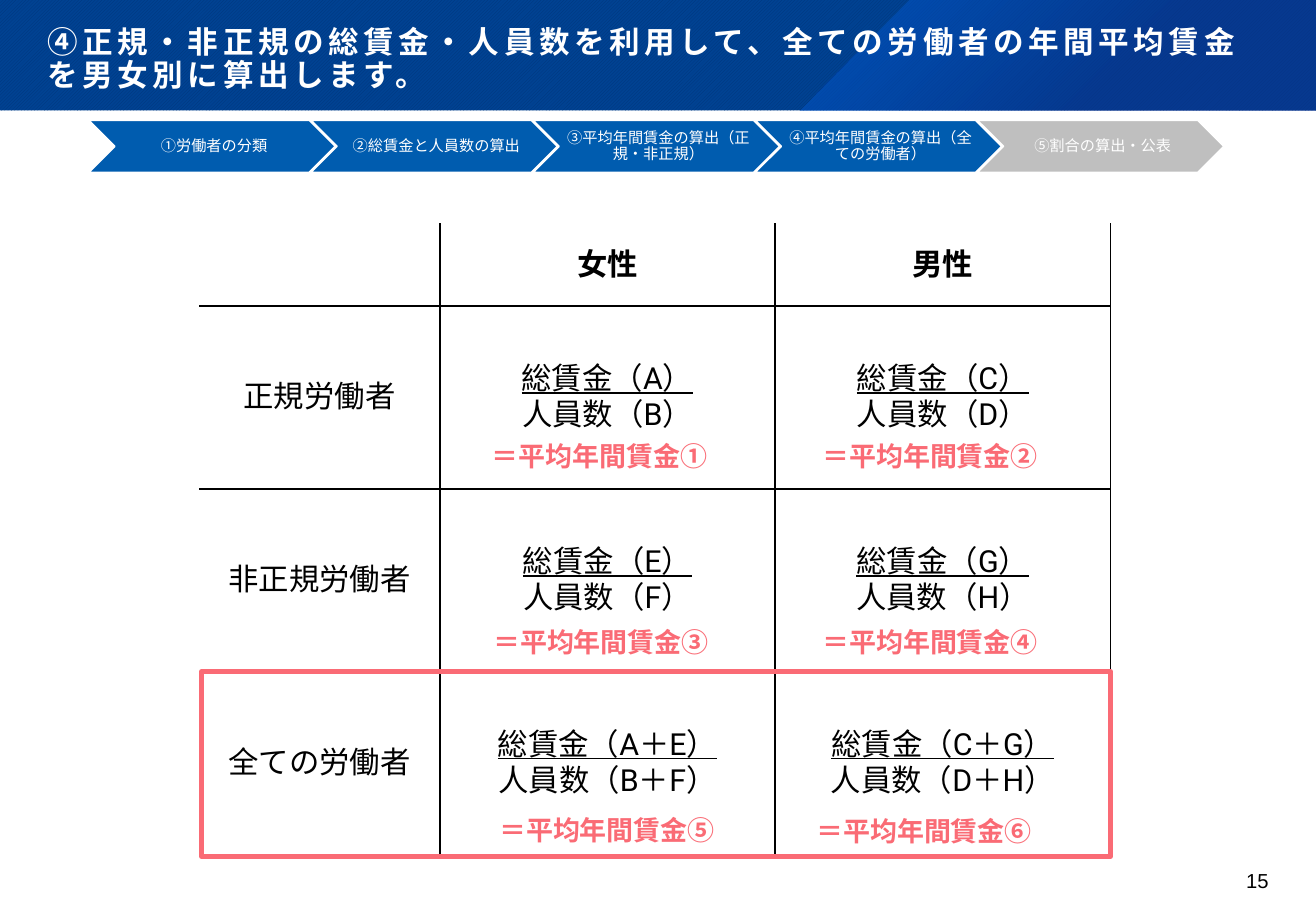
from dataclasses import dataclass

from pptx import Presentation
from pptx.dml.color import RGBColor
from pptx.enum.dml import MSO_PATTERN
from pptx.enum.shapes import MSO_SHAPE
from pptx.enum.text import MSO_ANCHOR, MSO_AUTO_SIZE, PP_ALIGN
from pptx.oxml import parse_xml
from pptx.oxml.ns import nsdecls, qn
from pptx.util import Inches, Pt

RECT, CHEVRON = MSO_SHAPE.RECTANGLE, MSO_SHAPE.CHEVRON
LEFT, CENTER, RIGHT = PP_ALIGN.LEFT, PP_ALIGN.CENTER, PP_ALIGN.RIGHT
TOP, MIDDLE, BOTTOM = MSO_ANCHOR.TOP, MSO_ANCHOR.MIDDLE, MSO_ANCHOR.BOTTOM
HATCH = MSO_PATTERN.DARK_UPWARD_DIAGONAL
WIDE, HIGH = Inches(10.83), Inches(7.5)
FONT = "Roboto"
COLORS = {
    "navy": "003579", "royal": "004292", "glow": "0064DF", "deep": "0C338E",
    "step": "005CAF", "grey": "BFBFBF", "pink": "FA6B75",
    "white": "FFFFFF", "black": "000000",
}


@dataclass
class Box:
    """Place and size in percent of the slide's width and height."""
    x: float
    y: float
    w: float
    h: float

    def emu(self) -> tuple[int, int, int, int]:
        return across(self.x), down(self.y), across(self.w), down(self.h)


@dataclass
class Style:
    size: float
    color: str
    bold: bool = False
    font: str = FONT
    align: PP_ALIGN = LEFT
    anchor: MSO_ANCHOR = TOP
    pad: tuple = (0.1, 0.05, 0.1, 0.05)
    lead: float = 1.0


@dataclass
class Step:
    text: str
    color: str = "step"


@dataclass
class Group:
    name: str
    women: tuple[str, str]
    men: tuple[str, str]


@dataclass
class Result:
    mark: str
    x: float
    y: float


TITLE = Style(18.1, "white", True, anchor=BOTTOM, pad=(0.39, 0.36, 0.36, 0.14), lead=0.9)
STEP = Style(9, "white", align=CENTER, anchor=MIDDLE, pad=(0.04, 0.01, 0.01, 0.01), lead=0.9)
PAGE = Style(12, "black", font="Arial", align=RIGHT, pad=(0, 0, 0, 0))
RESULT = Style(16, "pink", True)
HEAD = Style(18, "black", True, align=CENTER)
CELL = Style(18, "black", align=CENTER)

STEPS = [
    Step("①労働者の分類"),
    Step("②総賃金と人員数の算出"),
    Step("③平均年間賃金の算出（正規・非正規）"),
    Step("④平均年間賃金の算出（全ての労働者）"),
    Step("⑤割合の算出・公表", "grey"),
]
GROUPS = [
    Group("正規労働者", ("A", "B"), ("C", "D")),
    Group("非正規労働者", ("E", "F"), ("G", "H")),
    Group("全ての労働者", ("A＋E", "B＋F"), ("C＋G", "D＋H")),
]
RESULTS = [
    Result("①", 36.47, 47.6), Result("②", 61.59, 47.6),
    Result("③", 36.57, 68), Result("④", 61.59, 68),
    Result("⑤", 37.03, 88.67), Result("⑥", 61.13, 88.8),
]
COLS = [18.28, 25.48, 25.48]
ROWS = [9.07, 20.07, 20.07, 20.07]


def across(share: float) -> int:
    return round(WIDE * share / 100)


def down(share: float) -> int:
    return round(HIGH * share / 100)


def rgb(name: str) -> RGBColor:
    return RGBColor.from_string(COLORS[name])


def format_line(para, style: Style) -> None:
    para.alignment, para.line_spacing = style.align, style.lead
    for run in para.runs:
        font = run.font
        font.name, font.size, font.bold = style.font, Pt(style.size), style.bold
        font.color.rgb = rgb(style.color)
        latin = run._r.rPr.find(qn("a:latin"))
        latin.addnext(parse_xml(f'<a:ea {nsdecls("a")} typeface="{style.font}"/>'))


def fill_frame(frame, text: str, style: Style) -> None:
    frame.text = text
    frame.word_wrap, frame.auto_size = True, MSO_AUTO_SIZE.NONE
    frame.vertical_anchor = style.anchor
    (frame.margin_left, frame.margin_top,
     frame.margin_right, frame.margin_bottom) = map(Inches, style.pad)
    for para in frame.paragraphs:
        format_line(para, style)


def add_text(shapes, box: Box, text: str, style: Style) -> None:
    fill_frame(shapes.add_textbox(*box.emu()).text_frame, text, style)


def add_form(shapes, kind: MSO_SHAPE, box: Box):
    form = shapes.add_shape(kind, *box.emu())
    form.shadow.inherit = False
    return form


def add_banner(slide) -> None:
    box = Box(0, 0, 100, 12.13)
    band = add_form(slide.shapes, RECT, box)
    band.fill.patterned()
    band.fill.pattern = HATCH
    band.fill.fore_color.rgb, band.fill.back_color.rgb = rgb("navy"), rgb("royal")
    band.line.fill.background()

    # Slanted glow on the right
    pen = slide.shapes.build_freeform(across(69.16), 0)
    pen.add_line_segments([(WIDE, 0), (WIDE, down(box.h)), (across(60.76), down(box.h))])
    glow = pen.convert_to_shape()
    glow.shadow.inherit = False
    glow.line.fill.background()
    stops = "".join(
        f'<a:gs pos="{pos}000"><a:srgbClr val="{COLORS[name]}">'
        f'<a:alpha val="{alpha}000"/></a:srgbClr></a:gs>'
        for pos, name, alpha in ((0, "glow", 50), (62, "deep", 55)))
    glow.element.spPr.find(qn("a:custGeom")).addnext(parse_xml(
        f'<a:gradFill {nsdecls("a")}><a:gsLst>{stops}</a:gsLst><a:path path="circle">'
        '<a:fillToRect r="100000" b="100000"/></a:path></a:gradFill>'))

    # Title on top of the band
    title = slide.shapes.title
    title.left, title.top, title.width, title.height = box.emu()
    title.element.getparent().append(title.element)
    fill_frame(title.text_frame,
               "④正規・非正規の総賃金・人員数を利用して、全ての労働者の年間平均賃金を男女別に算出します。", TITLE)
    title.text_frame.paragraphs[0].runs[0]._r.rPr.set("spc", "270")


def set_edges(cell, row: int, col: int) -> None:
    shown = {"L": col > 0, "R": True, "T": row > 0, "B": True}
    for spot, (side, seen) in enumerate(shown.items()):
        paint = (f'<a:solidFill><a:srgbClr val="{COLORS["black"]}"/></a:solidFill>'
                 if seen else "<a:noFill/>")
        cell._tc.get_or_add_tcPr().insert(spot, parse_xml(
            f'<a:ln{side} {nsdecls("a")} w="12700">{paint}</a:ln{side}>'))


def add_grid(shapes) -> None:
    box = Box(15.14, 24.53, sum(COLS), sum(ROWS))
    table = shapes.add_table(len(ROWS), len(COLS), *box.emu()).table
    table.first_row = table.horz_banding = False
    for col, width in zip(table.columns, COLS):
        col.width = across(width)
    for row, height in zip(table.rows, ROWS):
        row.height = down(height)
    texts = [["", "女性", "男性"]]
    for group in GROUPS:
        sums = [f"総賃金（{pay}）\n人員数（{count}）" for pay, count in (group.women, group.men)]
        texts.append([group.name, *sums])
    for i, line in enumerate(texts):
        for j, text in enumerate(line):
            cell = table.cell(i, j)
            cell.text_frame.text = text
            cell.vertical_anchor = MIDDLE
            cell.fill.background()
            set_edges(cell, i, j)
            paras = cell.text_frame.paragraphs
            for para in paras:
                format_line(para, CELL if i else HEAD)
            if i and j:
                paras[0].runs[0].font.underline = True


def add_steps(shapes) -> None:
    for i, step in enumerate(STEPS):
        x = 6.74 + 16.88 * i
        form = add_form(shapes, CHEVRON, Box(x, 13.2, 18.74, 5.73))
        form.fill.solid()
        form.fill.fore_color.rgb = rgb(step.color)
        form.line.color.rgb, form.line.width = rgb("white"), Pt(1)
        add_text(shapes, Box(x + 2, 13.2, 14.77, 5.73), step.text, STEP)


def main() -> None:
    deck = Presentation()
    deck.slide_width, deck.slide_height = WIDE, HIGH
    slide = deck.slides.add_slide(deck.slide_layouts[5])
    shapes = slide.shapes
    add_banner(slide)
    add_text(shapes, Box(90.03, 95.33, 6.37, 4), "15", PAGE)
    add_grid(shapes)
    for item in RESULTS:
        add_text(shapes, Box(item.x, item.y, 25.02, 4.93), f"＝平均年間賃金{item.mark}", RESULT)

    # Frame around the last row
    frame = add_form(shapes, RECT, Box(15.33, 73.73, 69.07, 20.27))
    frame.fill.background()
    frame.line.color.rgb, frame.line.width = rgb("pink"), Pt(3)
    add_steps(shapes)
    deck.save("out.pptx")


if __name__ == "__main__":
    main()
